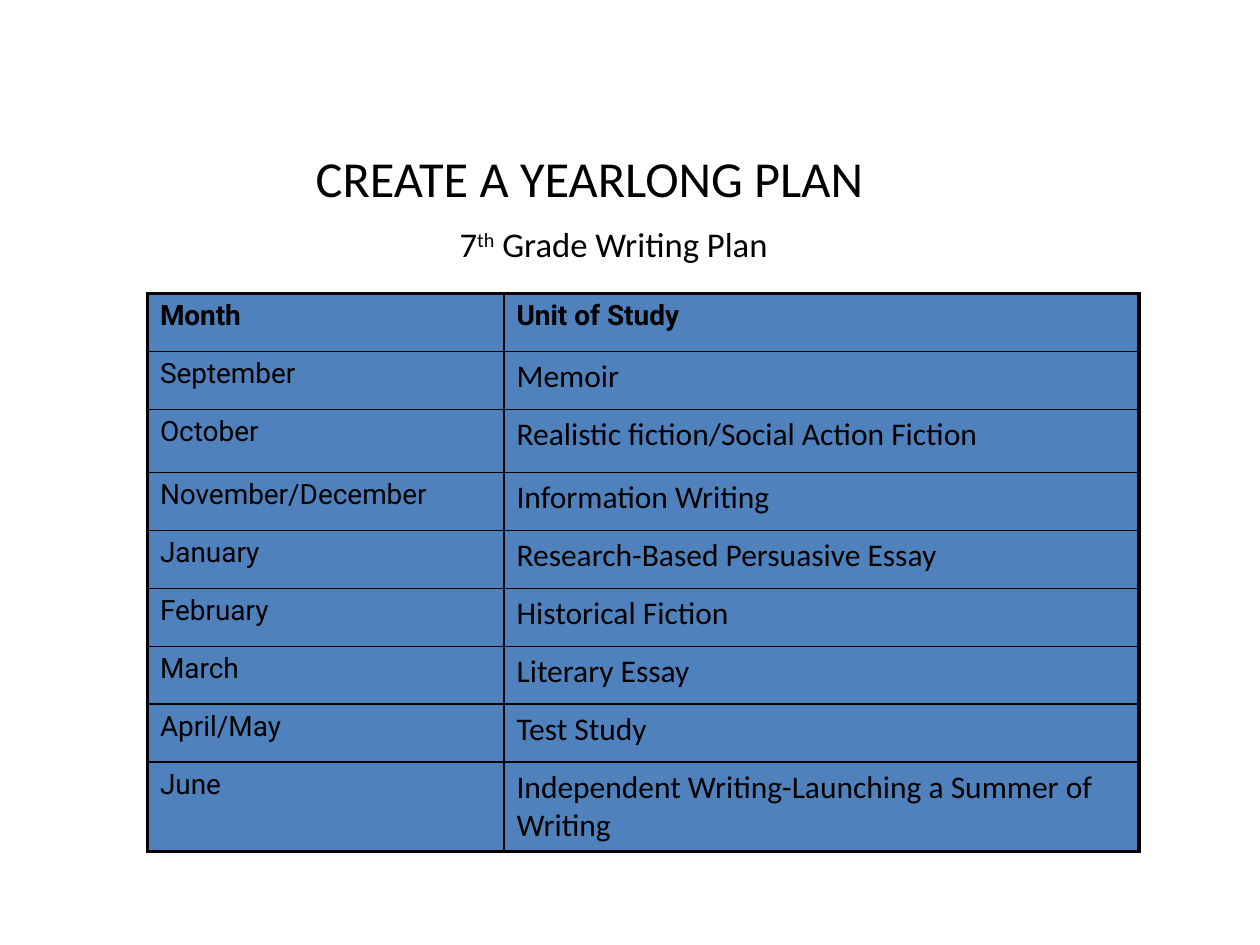
from typing import NamedTuple

import pptx
import pptx.dml.color
import pptx.enum.text
import pptx.oxml
import pptx.oxml.ns
import pptx.util
from pptx.util import Inches

BLACK = "000000"
BLUE = "4F81BD"
THIN, THICK = 1, 2.25
COLUMN_WIDTHS = (2.83, 5.04)


class PlanRow(NamedTuple):
    month: str
    unit: str
    height: float = 0.46


PLAN = [
    PlanRow("Month", "Unit of Study"),
    PlanRow("September", "Memoir"),
    PlanRow("October", "Realistic fiction/Social Action Fiction", 0.5),
    PlanRow("November/December", "Information Writing"),
    PlanRow("January", "Research-Based Persuasive Essay"),
    PlanRow("February", "Historical Fiction"),
    PlanRow("March", "Literary Essay"),
    PlanRow("April/May", "Test Study"),
    PlanRow("June", "Independent Writing-Launching a Summer of Writing", 0.71),
]


def rgb(value: str) -> pptx.dml.color.RGBColor:
    return pptx.dml.color.RGBColor.from_string(value)


def add_text(paragraph, text: str, *, size: float, font: str = "Calibri",
             bold: bool = False, superscript: bool = False) -> None:
    run = paragraph.add_run()
    run.text = text
    run.font.size = pptx.util.Pt(size)
    run.font.name = font
    run.font.bold = bold
    run.font.color.rgb = rgb(BLACK)
    if superscript:
        run.font._element.set("baseline", "30000")


def add_heading(slide, left: float, top: float, width: float, height: float):
    """Add an unpadded text box and return its centred paragraph."""
    frame = slide.shapes.add_textbox(
        Inches(left), Inches(top), Inches(width), Inches(height)).text_frame
    frame.word_wrap = True
    frame.margin_left = frame.margin_right = 0
    frame.margin_top = frame.margin_bottom = 0
    paragraph = frame.paragraphs[0]
    paragraph.alignment = pptx.enum.text.PP_ALIGN.CENTER
    return paragraph


def set_border(cell, side: str, width: float) -> None:
    line = pptx.oxml.parse_xml(
        f'<a:ln{side} {pptx.oxml.ns.nsdecls("a")} w="{pptx.util.Pt(width)}">'
        f'<a:solidFill><a:srgbClr val="{BLACK}"/></a:solidFill></a:ln{side}>')
    cell._tc.get_or_add_tcPr().append(line)


def add_plan_table(slide, left: float, top: float) -> None:
    table = slide.shapes.add_table(
        len(PLAN), len(COLUMN_WIDTHS), Inches(left), Inches(top),
        Inches(sum(COLUMN_WIDTHS)), Inches(sum(row.height for row in PLAN))).table
    for column, width in zip(table.columns, COLUMN_WIDTHS):
        column.width = Inches(width)
    last_row, last_column = len(PLAN) - 1, len(COLUMN_WIDTHS) - 1
    for r, entry in enumerate(PLAN):
        table.rows[r].height = Inches(entry.height)
        for c, text in enumerate((entry.month, entry.unit)):
            cell = table.cell(r, c)
            outer_sides = {"L": c == 0, "R": c == last_column,
                           "T": r == 0, "B": r == last_row}
            for side, is_outer in outer_sides.items():
                set_border(cell, side, THICK if is_outer else THIN)
            cell.fill.solid()
            cell.fill.fore_color.rgb = rgb(BLUE)
            is_header = r == 0
            in_roboto = is_header or c == 0
            add_text(cell.text_frame.paragraphs[0], text, bold=is_header,
                     size=16 if in_roboto else 18,
                     font="Roboto" if in_roboto else "Calibri")


def main() -> None:
    deck = pptx.Presentation()
    deck.slide_width, deck.slide_height = Inches(10), Inches(7.5)
    slide = deck.slides.add_slide(deck.slide_layouts[6])

    title = add_heading(slide, 0.68, 1.17, 8, 0.5)
    add_text(title, "CREATE A YEARLONG PLAN", size=28.8)
    subtitle = add_heading(slide, 0.87, 1.77, 8, 0.35)
    add_text(subtitle, "7", size=19.8)
    add_text(subtitle, "th", size=19.8, superscript=True)
    add_text(subtitle, " Grade Writing Plan", size=19.8)

    add_plan_table(slide, 1.17, 2.33)
    deck.save("out.pptx")


if __name__ == "__main__":
    main()
